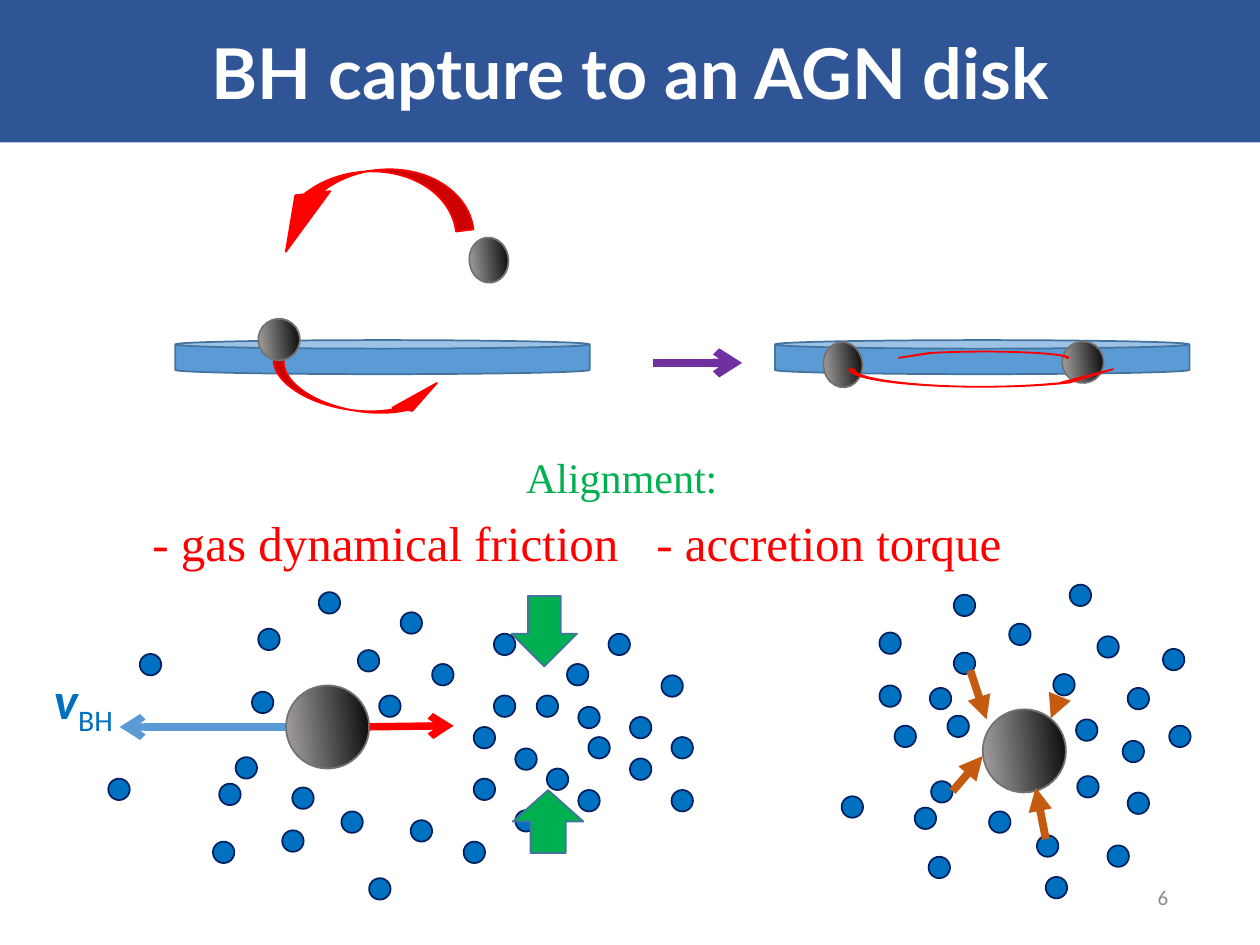
import dataclasses

import lxml.etree
import pptx
import pptx.dml.color
import pptx.enum.shapes
import pptx.enum.text
import pptx.oxml.ns
import pptx.util

Inches = pptx.util.Inches
Pt = pptx.util.Pt
qn = pptx.oxml.ns.qn
Shape = pptx.enum.shapes.MSO_SHAPE
Align = pptx.enum.text.PP_ALIGN
Anchor = pptx.enum.text.MSO_ANCHOR
AutoSize = pptx.enum.text.MSO_AUTO_SIZE


@dataclasses.dataclass(frozen=True)
class Theme:
    white: str = "FFFFFF"
    banner: str = "2F5597"
    disk: str = "5B9BD5"
    outline: str = "43739E"
    red: str = "FF0000"
    green: str = "00B050"
    purple: str = "7030A0"
    orange: str = "C55A11"
    gas: str = "0070C0"
    gas_outline: str = "002060"
    hole_dark: str = "000000"
    hole_light: str = "AFABAB"
    hole_outline: str = "767171"
    number: str = "8C8C8C"
    title_font: str = "Lato"
    body_font: str = "Times New Roman"
    label_font: str = "Calibri"
    title_size: float = 40
    heading_size: float = 24
    item_size: float = 28
    label_size: float = 29.4
    number_size: float = 12


def rgb(value):
    return pptx.dml.color.RGBColor.from_string(value)


class SlideBuilder:
    def __init__(self, slide, theme):
        self.slide = slide
        self.theme = theme

    def place(self, shape, left, top, width, height):
        shape.left, shape.top = Inches(left), Inches(top)
        shape.width, shape.height = Inches(width), Inches(height)

    def format_run(self, run, font, size, color, bold=False, italic=False):
        run.font.name, run.font.size = font, Pt(size)
        run.font.color.rgb = rgb(color)
        run.font.bold, run.font.italic = bold, italic

    def title(self, text, box):
        shape = self.slide.shapes.title
        self.place(shape, *box)
        shape.fill.solid()
        shape.fill.fore_color.rgb = rgb(self.theme.banner)
        frame = shape.text_frame
        frame.text = text
        frame.auto_size = AutoSize.NONE
        frame.vertical_anchor = Anchor.MIDDLE
        paragraph = frame.paragraphs[0]
        paragraph.alignment = Align.CENTER
        self.format_run(paragraph.runs[0], self.theme.title_font,
                        self.theme.title_size, self.theme.white, bold=True)

    def body(self, heading, items, box, tab):
        """A centred heading over two items set apart by a tab stop."""
        theme = self.theme
        shape = self.slide.placeholders[1]
        self.place(shape, *box)
        frame = shape.text_frame
        frame.text = heading
        frame.add_paragraph().text = "\t".join(items)
        frame.auto_size = AutoSize.NONE
        frame.vertical_anchor = Anchor.TOP
        frame.margin_left, frame.margin_right = Inches(0.4), Inches(0.35)
        styles = [(Align.CENTER, theme.heading_size, theme.green),
                  (Align.LEFT, theme.item_size, theme.red)]
        for paragraph, (alignment, size, color) in zip(frame.paragraphs, styles):
            paragraph.alignment = alignment
            paragraph.line_spacing = 1.1
            paragraph.space_before = Pt(3)
            for run in paragraph.runs:
                self.format_run(run, theme.body_font, size, color)
            properties = paragraph._p.get_or_add_pPr()
            properties.set("marL", "0")
            properties.set("indent", "0")
            lxml.etree.SubElement(properties, qn("a:buNone"))
            if alignment == Align.LEFT:
                tabs = lxml.etree.SubElement(properties, qn("a:tabLst"))
                lxml.etree.SubElement(tabs, qn("a:tab"),
                                      pos=str(Inches(tab)), algn="l")

    def text_box(self, box, alignment=Align.LEFT, wrap=True):
        shape = self.slide.shapes.add_textbox(*map(Inches, box))
        frame = shape.text_frame
        frame.word_wrap = wrap
        frame.vertical_anchor = Anchor.MIDDLE if wrap else Anchor.TOP
        frame.auto_size = AutoSize.NONE if wrap else AutoSize.SHAPE_TO_FIT_TEXT
        paragraph = frame.paragraphs[0]
        paragraph.alignment = alignment
        return paragraph

    def page_number(self, text, box):
        paragraph = self.text_box(box, Align.RIGHT)
        paragraph.text = text
        self.format_run(paragraph.runs[0], self.theme.label_font,
                        self.theme.number_size, self.theme.number)

    def velocity_label(self, symbol, subscript, box):
        paragraph = self.text_box(box, wrap=False)
        for text, strong in ((symbol, True), (subscript, False)):
            run = paragraph.add_run()
            run.text = text
            self.format_run(run, self.theme.label_font, self.theme.label_size,
                            self.theme.gas, strong, strong)
        run.font._element.set("baseline", "-25000")

    def shape(self, kind, box, fill, line, rotation=0, adjustments=()):
        shape = self.slide.shapes.add_shape(kind, *map(Inches, box))
        shape.shadow.inherit = False
        shape.rotation = rotation
        for index, value in enumerate(adjustments):
            shape.adjustments[index] = value
        if fill:
            shape.fill.solid()
            shape.fill.fore_color.rgb = rgb(fill)
        shape.line.color.rgb = rgb(line)
        shape.line.width = Pt(1)
        return shape

    def disk(self, left):
        self.shape(Shape.CAN, (left, 2.7, 3.29, 0.27),
                   self.theme.disk, self.theme.outline)

    def orbit(self, box, rotation=0):
        self.shape(Shape.CURVED_UP_ARROW, box, self.theme.red, self.theme.red,
                   rotation, (0.25, 0.5, 0.78))

    def block_arrow(self, box, rotation=0):
        self.shape(Shape.DOWN_ARROW, box, self.theme.green, self.theme.outline,
                   rotation)

    def black_hole(self, left, top, width, height):
        shape = self.shape(Shape.OVAL, (left, top, width, height), None,
                           self.theme.hole_outline, 84)
        shape.fill.gradient()
        shape.fill.gradient_angle = 270
        colors = (self.theme.hole_dark, self.theme.hole_light)
        for position, (stop, color) in enumerate(zip(shape.fill.gradient_stops, colors)):
            stop.position = position
            stop.color.rgb = rgb(color)

    def gas(self, positions):
        for left, top in positions:
            self.shape(Shape.OVAL, (left, top, 0.17, 0.17),
                       self.theme.gas, self.theme.gas_outline)

    def arrow(self, start, end, color, width, head="arrow"):
        connector = self.slide.shapes.add_connector(
            pptx.enum.shapes.MSO_CONNECTOR.STRAIGHT, *map(Inches, start + end))
        connector.line.color.rgb = rgb(color)
        connector.line.width = Pt(width)
        properties = connector._element.spPr
        lxml.etree.SubElement(properties.find(qn("a:ln")), qn("a:tailEnd"), type=head)
        lxml.etree.SubElement(properties, qn("a:effectLst"))


ACCRETION_GAS = [
    (7.1, 5.76), (6.98, 5.44), (6.68, 6.32), (7.57, 5.18), (8.95, 6.29), (9.23, 5.15),
    (8.95, 5.46), (8.79, 6.71), (9.28, 5.76), (7.57, 4.72), (8.01, 4.95), (8.55, 6.16),
    (8.91, 5.88), (6.98, 5.02), (7.39, 6.2), (7.38, 5.46), (8.54, 5.71), (7.85, 6.44),
    (8.71, 5.05), (7.26, 6.41), (8.3, 6.96), (8.49, 4.64), (8.23, 6.63), (7.37, 6.8),
    (8.36, 5.35), (7.52, 5.68)]
INFLOWS = [((8.3, 6.66), (8.22, 6.25)), ((7.56, 6.28), (7.8, 6)),
           ((7.7, 5.32), (7.83, 5.71)), ((8.41, 5.53), (8.34, 5.7))]
FRICTION_GAS = [
    (0.86, 6.18), (1.11, 5.19), (1.69, 6.68), (5, 5.69), (2.05, 4.99), (3.68, 6.68),
    (4.59, 6.27), (3.43, 5.27), (5.25, 5.36), (3.26, 6.51), (4.67, 5.85), (4.09, 5.94),
    (5.33, 6.27), (4.5, 5.27), (4.34, 6.1), (3.92, 5.03), (3.76, 5.77), (3.92, 5.52),
    (2.53, 4.7), (1.87, 6.01), (4.59, 5.61), (2.93, 6.97), (3.01, 5.52), (2.32, 6.25),
    (3.18, 4.86), (4.83, 5.03), (4.26, 5.52), (1.74, 6.22), (3.76, 6.18), (5, 6.02),
    (4.09, 6.43), (5.33, 5.85), (2.71, 6.44), (2.24, 6.59), (2.84, 5.16), (2, 5.49)]


def main():
    presentation = pptx.Presentation()
    presentation.slide_width, presentation.slide_height = Inches(10), Inches(7.5)
    theme = Theme()
    slide = presentation.slides.add_slide(presentation.slide_layouts[1])
    builder = SlideBuilder(slide, theme)

    # Text
    builder.title("BH capture to an AGN disk", (0, 0, 10, 1.13))
    builder.body("Alignment:", ("- gas dynamical friction", "- accretion torque"),
                 (0.81, 3.49, 8.2, 1.21), tab=4.68)
    builder.page_number("6", (7.12, 6.92, 2.25, 0.4))

    # Inclined orbit crossing the disk
    builder.disk(1.39)
    builder.orbit((2.14, 2.94, 1.39, 0.32), 9.1)
    builder.orbit((2.09, 1.36, 1.64, 0.56), 173.2)
    builder.black_hole(3.7, 1.91, 0.36, 0.31)
    builder.black_hole(2.05, 2.53, 0.33, 0.33)
    builder.arrow((5.18, 2.88), (5.89, 2.88), theme.purple, 4.75)

    # Orbit aligned with the disk
    builder.disk(6.15)
    builder.black_hole(8.43, 2.71, 0.33, 0.33)
    builder.orbit((7.12, 2.79, 1.36, 0.05), 180)
    builder.black_hole(6.51, 2.74, 0.36, 0.31)
    builder.orbit((6.74, 2.93, 2.13, 0.14))

    # Accretion torque
    builder.black_hole(7.8, 5.63, 0.66, 0.66)
    builder.gas(ACCRETION_GAS)
    for start, end in INFLOWS:
        builder.arrow(start, end, theme.orange, 4.5, "triangle")

    # Gas dynamical friction
    builder.arrow((2.27, 5.77), (0.95, 5.77), theme.disk, 4.25)
    builder.block_arrow((4.06, 4.73, 0.52, 0.56))
    builder.gas(FRICTION_GAS)
    builder.velocity_label("v", "BH", (0.33, 5.25, 0.72, 0.6))
    builder.arrow((2.82, 5.77), (3.6, 5.76), theme.red, 4.25)
    builder.block_arrow((4.07, 6.27, 0.56, 0.5), 180)
    builder.black_hole(2.27, 5.44, 0.66, 0.66)

    presentation.save("out.pptx")


if __name__ == "__main__":
    main()
